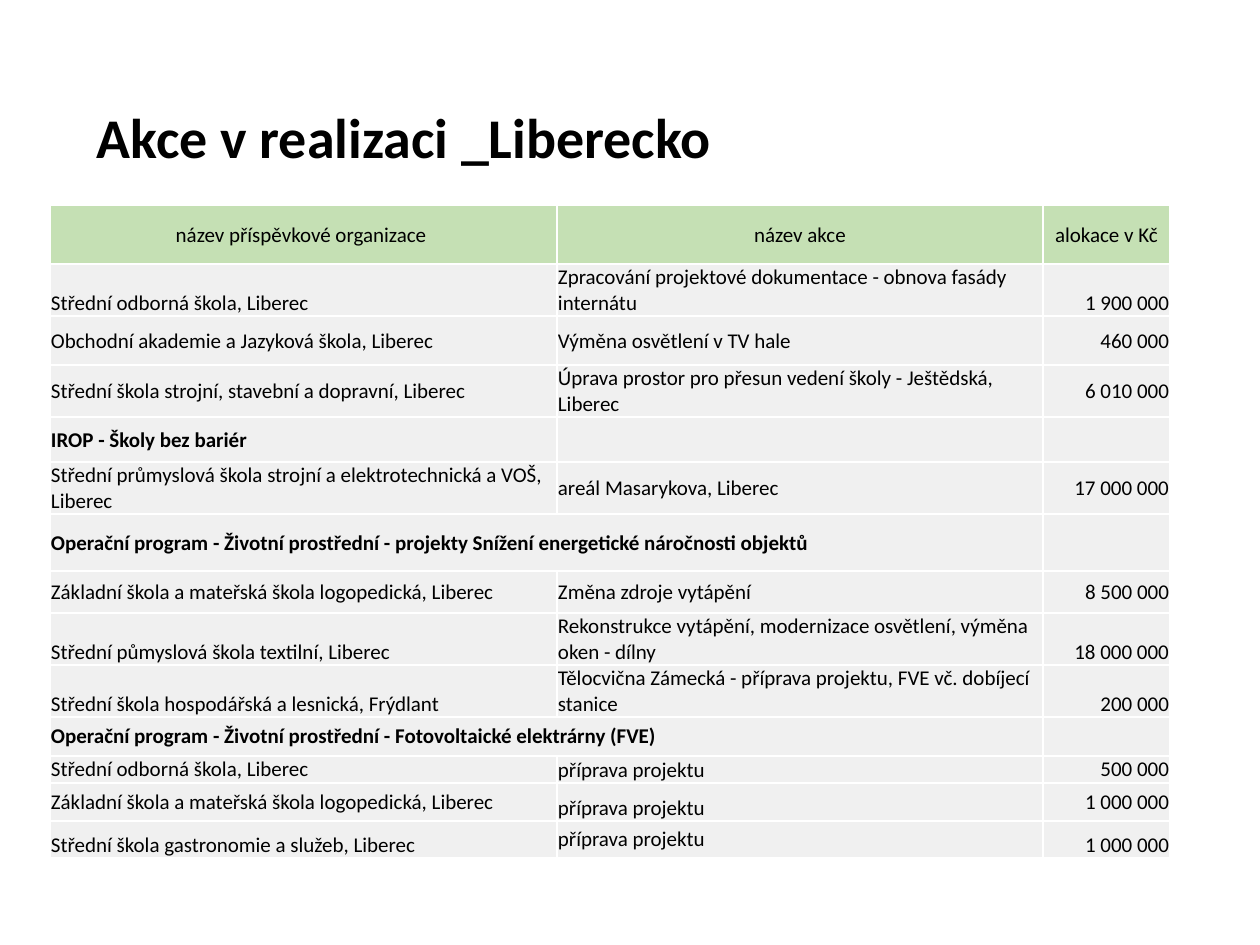
from dataclasses import dataclass

from lxml import etree
from pptx import Presentation
from pptx.dml.color import RGBColor
from pptx.enum.text import MSO_ANCHOR, MSO_AUTO_SIZE, PP_ALIGN
from pptx.oxml.ns import qn
from pptx.util import Emu, Pt

LEFT, MID, RIGHT = PP_ALIGN.LEFT, PP_ALIGN.CENTER, PP_ALIGN.RIGHT
ANCHORS = {"t": MSO_ANCHOR.TOP, "m": MSO_ANCHOR.MIDDLE, "b": MSO_ANCHOR.BOTTOM}
FIT = MSO_AUTO_SIZE.SHAPE_TO_FIT_TEXT
TITLE_ONLY = 5


@dataclass(frozen=True)
class Theme:
    font: str = "Calibri"
    ink: str = "000000"
    head: str = "C5E0B4"
    body: str = "F0F0F0"
    rule: str = "FFFFFF"
    title: int = 32
    text: int = 12


@dataclass(frozen=True)
class Row:
    high: int
    school: str
    work: str = ""
    sum: str = ""
    anchors: str = "mmm"
    bold: bool = False
    span: bool = False


THEME = Theme()
COLS = (507, 486, 127)
ROWS = (
    Row(59, "název příspěvkové organizace ", "název akce", "alokace v Kč"),
    Row(52, "Střední odborná škola, Liberec",
        "Zpracování projektové dokumentace - obnova fasády internátu", "1 900 000", "bmb"),
    Row(49, "Obchodní akademie a Jazyková škola, Liberec",
        "Výměna osvětlení v TV hale", "460 000"),
    Row(52, "Střední škola strojní, stavební a dopravní, Liberec",
        "Úprava prostor pro přesun vedení školy - Ještědská, Liberec", "6 010 000"),
    Row(45, "IROP - Školy bez bariér", bold=True),
    Row(52, "Střední průmyslová škola strojní a elektrotechnická a VOŠ, Liberec",
        "areál Masarykova, Liberec", "17 000 000"),
    Row(57, "Operační program - Životní prostřední - projekty Snížení energetické "
        "náročnosti objektů", bold=True, span=True),
    Row(42, "Základní škola a mateřská škola logopedická, Liberec",
        "Změna zdroje vytápění", "8 500 000"),
    Row(52, "Střední půmyslová škola textilní, Liberec",
        "Rekonstrukce vytápění, modernizace osvětlení, výměna oken - dílny",
        "18 000 000", "bmb"),
    Row(52, "Střední škola hospodářská a lesnická, Frýdlant",
        "Tělocvična Zámecká - příprava projektu, FVE vč. dobíjecí stanice",
        "200 000", "bbb"),
    Row(39, "Operační program - Životní prostřední - Fotovoltaické elektrárny (FVE)",
        bold=True, span=True),
    Row(27, "Střední odborná škola, Liberec", "příprava projektu", "500 000", "mbm"),
    Row(38, "Základní škola a mateřská škola logopedická, Liberec",
        "příprava projektu", "1 000 000", "mbm"),
    Row(37, "Střední škola gastronomie a služeb, Liberec",
        "příprava projektu", "1 000 000", "bmb"),
)


def px(n: int) -> Emu:
    return Emu(round(n * 914400 / 126))


def add_run(para, text: str, size: int, bold: bool) -> None:
    run = para.add_run()
    run.text = text
    font = run.font
    font.name, font.size, font.bold = THEME.font, Pt(size), bold
    font.color.rgb = RGBColor.from_string(THEME.ink)


def add_rules(cell) -> None:
    props = cell._tc.get_or_add_tcPr()
    for side in "LRTB":
        line = etree.SubElement(props, qn(f"a:ln{side}"), w=str(Pt(1)))
        fill = etree.SubElement(line, qn("a:solidFill"))
        etree.SubElement(fill, qn("a:srgbClr"), val=THEME.rule)


def fill_cell(cell, text: str, fill: str, align, anchor: str, bold: bool) -> None:
    add_rules(cell)
    cell.fill.solid()
    cell.fill.fore_color.rgb = RGBColor.from_string(fill)
    cell.margin_left = cell.margin_right = cell.margin_top = px(1)
    cell.margin_bottom = 0
    cell.vertical_anchor = ANCHORS[anchor]
    para = cell.text_frame.paragraphs[0]
    para.alignment = align
    if text:
        add_run(para, text, THEME.text, bold)
    else:
        # Keeps an empty cell as low as its row
        etree.SubElement(para._p, qn("a:endParaRPr"), sz=str(THEME.text * 100))


def add_title(slide, text: str) -> None:
    title = slide.shapes.title
    title.left, title.top, title.width, title.height = px(84), px(96), px(1052), px(81)
    frame = title.text_frame
    frame.word_wrap, frame.auto_size = True, FIT
    frame.vertical_anchor = ANCHORS["t"]
    para = frame.paragraphs[0]
    para.alignment = LEFT
    add_run(para, text, THEME.title, True)


def add_grid(slide) -> None:
    high = sum(row.high for row in ROWS)
    grid = slide.shapes.add_table(
        len(ROWS), len(COLS), px(50), px(205), px(sum(COLS)), px(high)).table
    grid.first_row = grid.horz_banding = False
    for col, wide in zip(grid.columns, COLS):
        col.width = px(wide)
    for r, row in enumerate(ROWS):
        grid.rows[r].height = px(row.high)
        head = r == 0
        aligns = (MID,) * 3 if head else (LEFT, LEFT, RIGHT)
        texts = (row.school, row.work, row.sum)
        for c, (text, align, anchor) in enumerate(zip(texts, aligns, row.anchors)):
            fill = THEME.head if head else THEME.body
            fill_cell(grid.cell(r, c), text, fill, align, anchor, row.bold)
        if row.span:
            grid.cell(r, 0).merge(grid.cell(r, 1))


def main() -> None:
    deck = Presentation()
    deck.slide_width, deck.slide_height = px(1260), px(945)
    slide = deck.slides.add_slide(deck.slide_layouts[TITLE_ONLY])
    # Heading
    add_title(slide, "Akce v realizaci _Liberecko")
    # Table of projects
    add_grid(slide)
    deck.save("out.pptx")


if __name__ == "__main__":
    main()
